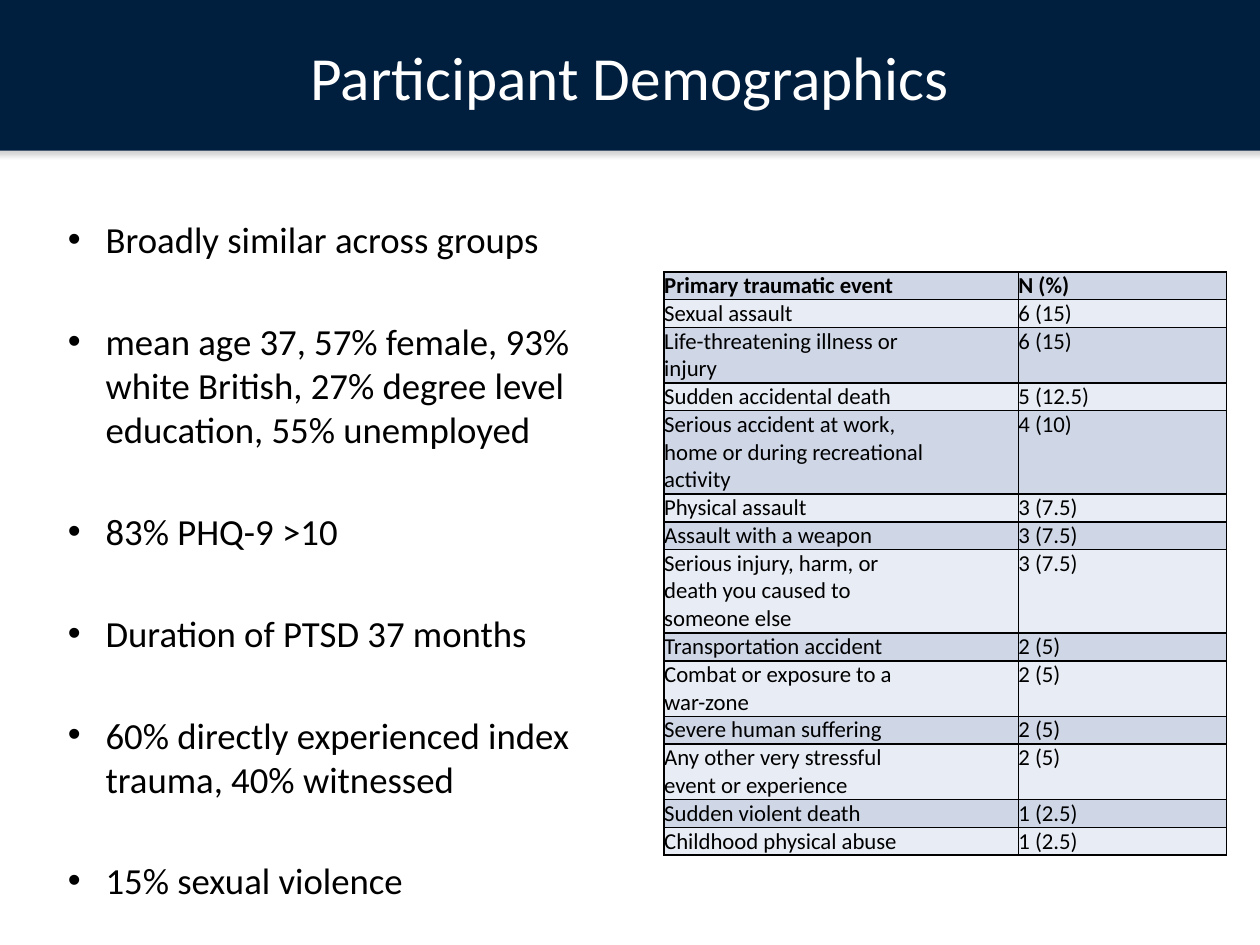
import pptx
import pptx.dml.color
import pptx.enum.shapes
import pptx.enum.text
import pptx.oxml
import pptx.oxml.ns
import pptx.util
from lxml import etree

Cm, Pt = pptx.util.Cm, pptx.util.Pt

# Content
TITLE = "Participant Demographics"
POINTS = [
    "Broadly similar across groups",
    "mean age 37, 57% female, 93% white British, 27% degree level education, 55% unemployed",
    "83% PHQ-9 >10",
    "Duration of PTSD 37 months",
    "60% directly experienced index trauma, 40% witnessed",
    "15% sexual violence",
]
# Event, count with percentage, lines the event takes
EVENTS = [
    ("Primary traumatic event", "N (%)", 1),
    ("Sexual assault", "6 (15)", 1),
    ("Life-threatening illness or injury", "6 (15)", 2),
    ("Sudden accidental death", "5 (12.5)", 1),
    ("Serious accident at work, home or during recreational activity", "4 (10)", 3),
    ("Physical assault", "3 (7.5)", 1),
    ("Assault with a weapon", "3 (7.5)", 1),
    ("Serious injury, harm, or death you caused to someone else", "3 (7.5)", 3),
    ("Transportation accident", "2 (5)", 1),
    ("Combat or exposure to a war-zone", "2 (5)", 2),
    ("Severe human suffering", "2 (5)", 1),
    ("Any other very stressful event or experience", "2 (5)", 2),
    ("Sudden violent death", "1 (2.5)", 1),
    ("Childhood physical abuse", "1 (2.5)", 1),
]

THEME = {
    "font": "Calibri",
    "banner": "001E3D", "title": "FFFFFF", "text": "000000", "shadow": "808080",
    "bands": ("CFD7E7", "E8ECF4"),
    "title_size": 35, "point_size": 21, "table_size": 13,
}
COLUMN_WIDTHS = (7.14, 4.19)
EVENT_RIGHT_MARGIN = 1.78
LINE_HEIGHT = 0.56
POINT_INDENT = 0.76
POINT_GAP = 33


def color(name):
    return pptx.dml.color.RGBColor.from_string(name)


def add_xml(parent, xml):
    namespaces = pptx.oxml.ns.nsdecls("a")
    tag, rest = xml.split(" ", 1)
    parent.append(pptx.oxml.parse_xml(f"{tag} {namespaces} {rest}"))


def style_text(para, size, shade, bold=False):
    for span in para.runs:
        span.font.name = THEME["font"]
        span.font.size = Pt(size)
        span.font.bold = bold
        span.font.color.rgb = color(shade)


def add_text_box(page, left, top, width, height):
    box = page.shapes.add_textbox(Cm(left), Cm(top), Cm(width), Cm(height))
    frame = box.text_frame
    frame.word_wrap = True
    frame.margin_left = frame.margin_right = Cm(0.13)
    frame.margin_top = frame.margin_bottom = Cm(0.13)
    return frame


def add_banner(page):
    banner = page.shapes.add_shape(
        pptx.enum.shapes.MSO_SHAPE.RECTANGLE, Cm(-0.08), Cm(-0.03), Cm(25.63), Cm(3.07))
    banner.fill.solid()
    banner.fill.fore_color.rgb = color(THEME["banner"])
    banner.line.fill.background()
    add_xml(banner.element.spPr, (
        f'<a:effectLst ><a:outerShdw blurRad="{Pt(3)}" dist="{Pt(1.8)}" dir="5400000" '
        f'rotWithShape="0"><a:srgbClr val="{THEME["shadow"]}"><a:alpha val="35000"/>'
        '</a:srgbClr></a:outerShdw></a:effectLst>'))

    frame = add_text_box(page, 1.27, -0.05, 22.86, 3.17)
    frame.vertical_anchor = pptx.enum.text.MSO_ANCHOR.MIDDLE
    frame.text = TITLE
    para = frame.paragraphs[0]
    para.alignment = pptx.enum.text.PP_ALIGN.CENTER
    style_text(para, THEME["title_size"], THEME["title"])


def add_points(page):
    frame = add_text_box(page, 1.24, 4.24, 11.38, 14.33)
    for index, point in enumerate(POINTS):
        para = frame.add_paragraph() if index else frame.paragraphs[0]
        para.text = point
        properties = para._p.get_or_add_pPr()
        properties.set("marL", str(Cm(POINT_INDENT)))
        properties.set("indent", str(-Cm(POINT_INDENT)))
        add_xml(properties, '<a:buFont typeface="Arial"/>')
        add_xml(properties, '<a:buChar char="•"/>')
        if index:
            para.space_before = Pt(POINT_GAP)
        style_text(para, THEME["point_size"], THEME["text"])


def style_cell(cell, text, fill, right_margin, bold):
    cell.text = text
    cell.margin_left = cell.margin_top = cell.margin_bottom = 0
    cell.margin_right = Cm(right_margin)
    style_text(cell.text_frame.paragraphs[0], THEME["table_size"], THEME["text"], bold)
    properties = cell._tc.get_or_add_tcPr()
    for side in "LRTB":
        add_xml(properties, (
            f'<a:ln{side} w="{Pt(1)}"><a:solidFill><a:srgbClr val="{THEME["text"]}"/>'
            f'</a:solidFill></a:ln{side}>'))
    cell.fill.solid()
    cell.fill.fore_color.rgb = color(fill)


def add_events(page):
    height = LINE_HEIGHT * sum(lines for _, _, lines in EVENTS)
    table = page.shapes.add_table(
        len(EVENTS), len(COLUMN_WIDTHS), Cm(13.39), Cm(5.48),
        Cm(sum(COLUMN_WIDTHS)), Cm(height)).table
    for column, width in zip(table.columns, COLUMN_WIDTHS):
        column.width = Cm(width)
    for index, (event, count, lines) in enumerate(EVENTS):
        table.rows[index].height = Cm(LINE_HEIGHT * lines)
        fill = THEME["bands"][index % 2]
        style_cell(table.cell(index, 0), event, fill, EVENT_RIGHT_MARGIN, index == 0)
        style_cell(table.cell(index, 1), count, fill, 0, index == 0)


def main():
    deck = pptx.Presentation()
    deck.slide_width, deck.slide_height = Cm(25.4), Cm(19.05)
    page = deck.slides.add_slide(deck.slide_layouts[6])
    add_banner(page)
    add_points(page)
    add_events(page)
    deck.save("out.pptx")


if __name__ == "__main__":
    main()
